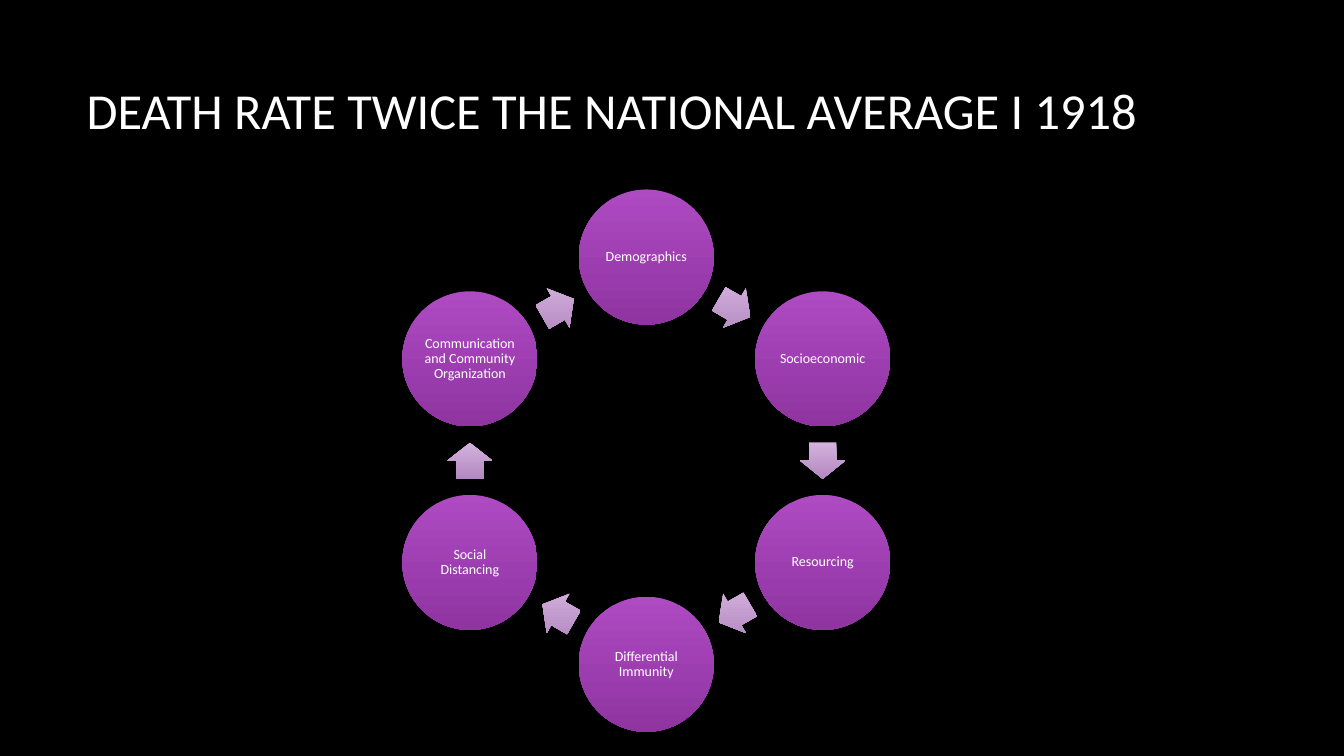
import math

import pptx
import pptx.dml.color
import pptx.enum.shapes
import pptx.enum.text
import pptx.oxml.ns
import pptx.util

Inches = pptx.util.Inches
Shape = pptx.enum.shapes.MSO_SHAPE
Align = pptx.enum.text.PP_ALIGN

COLORS = {
    "background": "000000",
    "text": "FFFFFF",
    "circle_top": "AE4AC2",
    "circle_bottom": "8F34A1",
    "arrow_top": "D3B2DD",
    "arrow_bottom": "B488C1",
}
FACTORS = [
    "Demographics",
    "Socioeconomic",
    "Resourcing",
    "Differential Immunity",
    "Social Distancing",
    "Communication and Community Organization",
]
CENTER_X, CENTER_Y = 6.41, 4.57
RING_RADIUS = 2.02
CIRCLE_SIZE = 1.34
ARROW_WIDTH, ARROW_HEIGHT = 0.36, 0.45


def color(name):
    return pptx.dml.color.RGBColor.from_string(COLORS[name])


def write_text(box, text, size, align=Align.LEFT, spacing=1.0, inset=None):
    frame = box.text_frame
    frame.word_wrap = True
    frame.vertical_anchor = pptx.enum.text.MSO_ANCHOR.MIDDLE
    if inset is not None:
        frame.margin_left = frame.margin_right = Inches(inset)
        frame.margin_top = frame.margin_bottom = Inches(inset)
    para = frame.paragraphs[0]
    para.alignment = align
    para.line_spacing = spacing
    span = para.add_run()
    span.text = text
    span.font.name = "Calibri"
    span.font.size = pptx.util.Pt(size)
    span.font.color.rgb = color("text")


def add_gradient_shape(page, kind, x, y, width, height, name):
    """Add a shape centred on x, y with a top-to-bottom gradient."""
    shape = page.shapes.add_shape(
        kind, Inches(x - width / 2), Inches(y - height / 2), Inches(width), Inches(height))
    shape.shadow.inherit = False
    shape.line.fill.background()
    shape.fill.gradient()
    shape.fill.gradient_angle = 270
    for stop, end, position in zip(shape.fill.gradient_stops, ("top", "bottom"), (0, 1)):
        stop.color.rgb = color(f"{name}_{end}")
        stop.position = position
    # Keep the gradient vertical when the shape is turned
    gradient = shape.element.spPr.find(pptx.oxml.ns.qn("a:gradFill"))
    gradient.set("rotWithShape", "0")
    return shape


def ring_point(radius, degrees):
    angle = math.radians(degrees)
    return CENTER_X + radius * math.cos(angle), CENTER_Y + radius * math.sin(angle)


def add_circle(page, text, degrees):
    x, y = ring_point(RING_RADIUS, degrees)
    circle = add_gradient_shape(page, Shape.OVAL, x, y, CIRCLE_SIZE, CIRCLE_SIZE, "circle")
    write_text(circle, text, size=10, align=Align.CENTER, spacing=0.9, inset=0.01)


def add_arrow(page, degrees, half_step):
    x, y = ring_point(RING_RADIUS * math.cos(math.radians(half_step)), degrees)
    arrow = add_gradient_shape(
        page, Shape.RIGHT_ARROW, x, y, ARROW_WIDTH, ARROW_HEIGHT, "arrow")
    arrow.adjustments[0] = 0.6
    arrow.adjustments[1] = 0.5
    arrow.rotation = (degrees + 90) % 360


def add_cycle(page, labels):
    step = 360 / len(labels)
    for index, label in enumerate(labels):
        degrees = index * step - 90
        add_circle(page, label, degrees)
        add_arrow(page, degrees + step / 2, step / 2)


def main():
    deck = pptx.Presentation()
    deck.slide_width, deck.slide_height = Inches(13.33), Inches(7.5)
    page = deck.slides.add_slide(deck.slide_layouts[6])
    page.background.fill.solid()
    page.background.fill.fore_color.rgb = color("background")

    # Title
    title = page.shapes.add_textbox(Inches(0.76), Inches(0.29), Inches(11.08), Inches(1.59))
    write_text(title, "DEATH RATE TWICE THE NATIONAL AVERAGE I 1918", size=36)

    # Cycle of factors
    add_cycle(page, FACTORS)

    deck.save("out.pptx")


if __name__ == "__main__":
    main()
